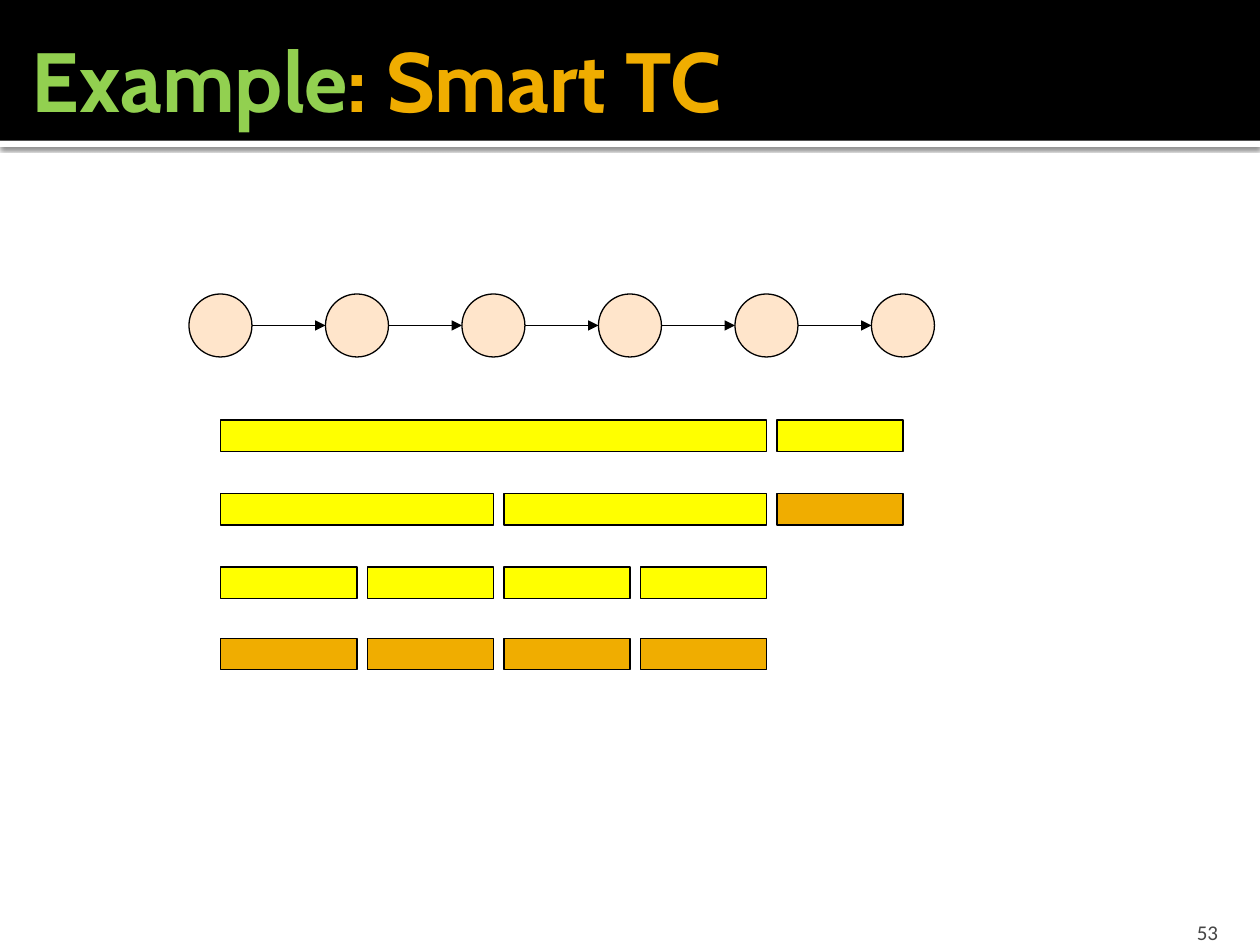
from dataclasses import dataclass
from typing import Optional

import lxml.etree
import pptx
import pptx.dml.color
import pptx.enum.shapes
import pptx.enum.text
import pptx.oxml.ns
import pptx.util

RGB = pptx.dml.color.RGBColor.from_string
Pt = pptx.util.Pt
qn = pptx.oxml.ns.qn
KIND = pptx.enum.shapes.MSO_SHAPE
ALIGN = pptx.enum.text.PP_ALIGN
ANCHOR = pptx.enum.text.MSO_ANCHOR
SCALE = 7620


@dataclass(frozen=True)
class Theme:
    black: str = "000000"
    white: str = "FFFFFF"
    gold: str = "F0AD00"
    green: str = "92D050"
    yellow: str = "FFFF00"
    peach: str = "FFCC99"
    gray: str = "454545"
    head: str = "Cabin"
    body: str = "Calibri"
    large: int = 48
    small: int = 12
    stroke: float = 0.75


@dataclass(frozen=True)
class Box:
    left: int
    top: int
    width: int
    height: int

    def emu(self) -> tuple:
        return tuple(px(n) for n in (self.left, self.top, self.width, self.height))


@dataclass(frozen=True)
class Row:
    top: int
    color: str
    spans: tuple


THEME = Theme()
NODES, LEFT, PITCH, SIZE, TOP = 6, 180, 130, 60, 280
GAP, THICK = 10, 30
ROWS = (
    Row(400, THEME.yellow, ((0, 4), (4, 5))),
    Row(470, THEME.yellow, ((0, 2), (2, 4))),
    Row(470, THEME.gold, ((4, 5),)),
    Row(540, THEME.yellow, ((0, 1), (1, 2), (2, 3), (3, 4))),
    Row(608, THEME.gold, ((0, 1), (1, 2), (2, 3), (3, 4))),
)


def px(count: int) -> int:
    return pptx.util.Emu(count * SCALE)


def add_shape(slide, kind, box: Box, fill: str, line: Optional[str] = None):
    shape = slide.shapes.add_shape(kind, *box.emu())
    shape.shadow.inherit = False
    shape.fill.solid()
    shape.fill.fore_color.rgb = RGB(fill)
    if line:
        shape.line.color.rgb = RGB(line)
        shape.line.width = Pt(THEME.stroke)
    else:
        shape.line.fill.background()
    return shape


def add_alpha(color, share: int) -> None:
    lxml.etree.SubElement(color, qn("a:alpha"), val=str(share * 1000))


def add_shadow(shape) -> None:
    effects = shape.element.spPr.find(qn("a:effectLst"))
    shadow = lxml.etree.SubElement(
        effects, qn("a:outerShdw"), blurRad=str(Pt(2.5)), dist=str(Pt(0.8)),
        dir="5400000", algn="tl", rotWithShape="0")
    color = lxml.etree.SubElement(shadow, qn("a:srgbClr"), val=THEME.black)
    add_alpha(color, 60)


def add_banner(slide) -> None:
    strip = add_shape(slide, KIND.RECTANGLE, Box(0, 134, 1200, 6), THEME.white)
    add_shadow(strip)
    add_shape(slide, KIND.RECTANGLE, Box(0, 0, 1200, 134), THEME.black)


def set_frame(frame, anchor, insets: tuple) -> None:
    frame.word_wrap = True
    frame.auto_size = pptx.enum.text.MSO_AUTO_SIZE.NONE
    frame.vertical_anchor = anchor
    (frame.margin_left, frame.margin_top,
     frame.margin_right, frame.margin_bottom) = (px(n) for n in insets)


def add_title(slide) -> None:
    title = slide.shapes.title
    title.left, title.top, title.width, title.height = Box(0, 0, 1200, 150).emu()
    set_frame(title.text_frame, ANCHOR.MIDDLE, (12, 6, 6, 6))
    para = title.text_frame.paragraphs[0]
    para.alignment = ALIGN.LEFT
    para.font.name = THEME.head
    para.font.size = Pt(THEME.large)
    para.font.bold = True
    for text, color in ((" Example", THEME.green), (": Smart TC", THEME.gold)):
        run = para.add_run()
        run.text = text
        run.font.color.rgb = RGB(color)
    title.element.getparent().append(title.element)


def add_number(slide, text: str) -> None:
    label = slide.shapes.add_textbox(*Box(1076, 864, 96, 36).emu())
    set_frame(label.text_frame, ANCHOR.BOTTOM, (12, 6, 12, 0))
    para = label.text_frame.paragraphs[0]
    para.text = text
    para.alignment = ALIGN.RIGHT
    para.font.name = THEME.body
    para.font.size = Pt(THEME.small)
    para.font.color.rgb = RGB(THEME.gray)


def add_node(slide, index: int) -> None:
    box = Box(LEFT + index * PITCH, TOP, SIZE, SIZE)
    node = add_shape(slide, KIND.OVAL, box, THEME.peach, THEME.black)
    color = node.element.spPr.find(qn("a:solidFill")).find(qn("a:srgbClr"))
    add_alpha(color, 50)


def add_arrow(slide, index: int) -> None:
    end = LEFT + index * PITCH
    start = end - PITCH + SIZE
    level = px(TOP + SIZE // 2)
    arrow = slide.shapes.add_connector(
        pptx.enum.shapes.MSO_CONNECTOR.STRAIGHT, px(start), level, px(end), level)
    arrow.line.color.rgb = RGB(THEME.black)
    arrow.line.width = Pt(THEME.stroke)
    lxml.etree.SubElement(arrow.get_or_add_ln(), qn("a:tailEnd"), type="triangle")
    lxml.etree.SubElement(arrow.element.spPr, qn("a:effectLst"))


def add_row(slide, row: Row) -> None:
    base = LEFT + SIZE // 2
    for first, last in row.spans:
        left = base + first * PITCH + (GAP if first else 0)
        right = base + last * PITCH
        box = Box(left, row.top, right - left, THICK)
        add_shape(slide, KIND.RECTANGLE, box, row.color, THEME.black)


def main() -> None:
    deck = pptx.Presentation()
    deck.slide_width, deck.slide_height = px(1200), px(900)
    slide = deck.slides.add_slide(deck.slide_layouts.get_by_name("Title Only"))
    add_banner(slide)
    add_number(slide, "53")
    add_title(slide)
    for index in range(NODES):
        add_node(slide, index)
        if index:
            add_arrow(slide, index)
    for row in ROWS:
        add_row(slide, row)
    deck.save("out.pptx")


if __name__ == "__main__":
    main()
